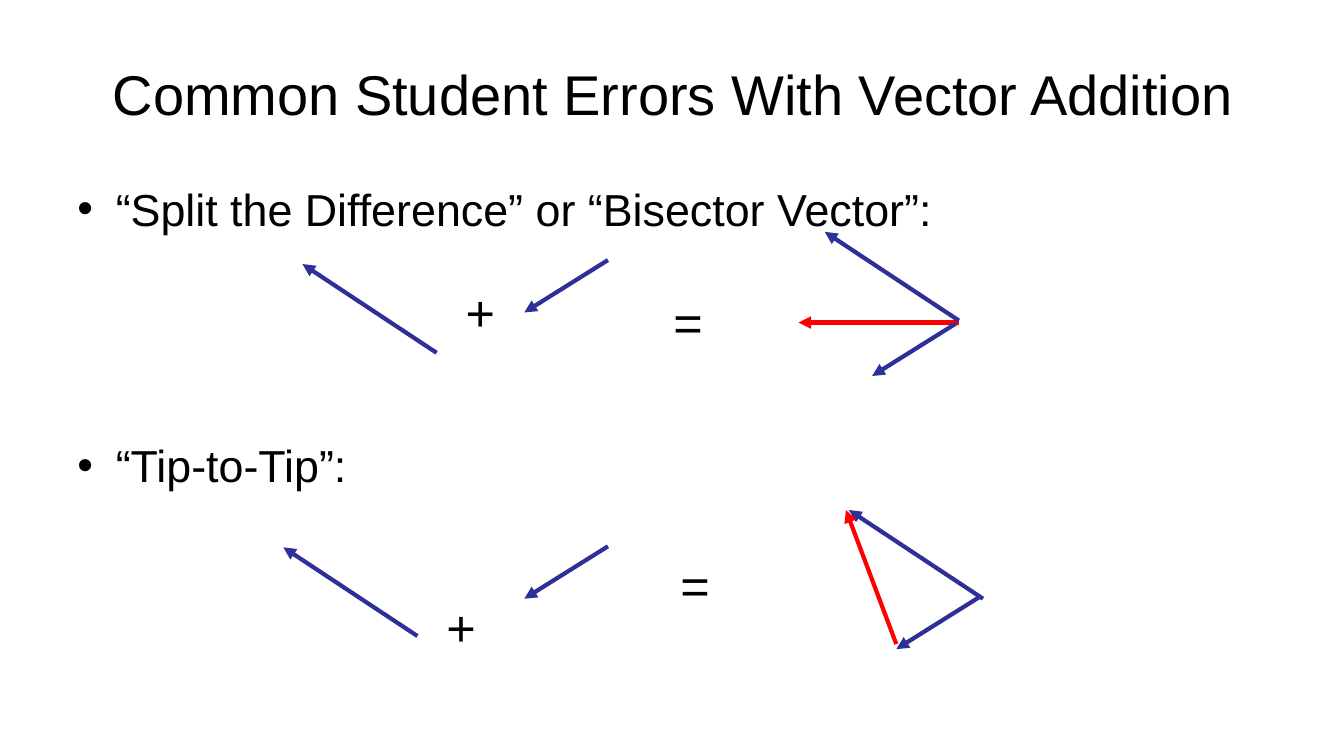
from lxml import etree
from pptx import Presentation
from pptx.dml.color import RGBColor
from pptx.enum.shapes import MSO_CONNECTOR
from pptx.enum.text import MSO_ANCHOR, PP_ALIGN
from pptx.oxml.ns import qn
from pptx.util import Inches, Pt

STRAIGHT = MSO_CONNECTOR.STRAIGHT
TOP, MIDDLE = MSO_ANCHOR.TOP, MSO_ANCHOR.MIDDLE
LEFT, CENTER = PP_ALIGN.LEFT, PP_ALIGN.CENTER

COLORS = {"text": "000000", "vector": "2F2F98", "wrong sum": "FF0000"}
FONT = "Arial"

TITLE = "Common Student Errors With Vector Addition"
ERRORS = ["“Split the Difference” or “Bisector Vector”:", "“Tip-to-Tip”:"]
ERROR_GAP = 145  # points between the two bullets

# Horizontal and vertical reach of each vector, in inches
LONG, SHORT = (-1.33, -0.88), (-0.83, 0.52)
BISECTOR, TIP_TO_TIP = (-1.59, 0), (-0.5, -1.33)

# Start point, reach, colour
ARROWS = [
    ((4.33, 3.5), LONG, "vector"),
    ((6.03, 2.58), SHORT, "vector"),
    ((9.51, 3.2), BISECTOR, "wrong sum"),
    ((4.14, 6.31), LONG, "vector"),
    ((6.03, 5.42), SHORT, "vector"),
    ((9.75, 5.94), LONG, "vector"),
    ((9.72, 5.92), SHORT, "vector"),
    ((8.89, 6.39), TIP_TO_TIP, "wrong sum"),
    ((9.51, 3.18), LONG, "vector"),
    ((9.48, 3.21), SHORT, "vector"),
]
# Sign, left, top
SIGNS = [("+", 4.52, 2.74), ("=", 6.58, 2.84), ("+", 4.33, 5.86), ("=", 6.65, 5.45)]


def add_bullet(para):
    properties = para._p.get_or_add_pPr()
    properties.set("marL", str(Inches(0.38)))
    properties.set("indent", str(Inches(-0.38)))
    etree.SubElement(properties, qn("a:buFont")).set("typeface", FONT)
    etree.SubElement(properties, qn("a:buChar")).set("char", "•")


def add_text(page, lines, bounds, size, align=LEFT, anchor=TOP, bulleted=False):
    box = page.shapes.add_textbox(*(Inches(length) for length in bounds))
    frame = box.text_frame
    frame.word_wrap = True
    frame.vertical_anchor = anchor
    for index, line in enumerate(lines):
        para = frame.add_paragraph() if index else frame.paragraphs[0]
        para.alignment = align
        if bulleted:
            add_bullet(para)
        if index:
            para.space_before = Pt(ERROR_GAP)
        span = para.add_run()
        span.text = line
        span.font.name = FONT
        span.font.size = Pt(size)
        span.font.color.rgb = RGBColor.from_string(COLORS["text"])


def add_arrow(page, start, reach, color):
    end = [origin + length for origin, length in zip(start, reach)]
    arrow = page.shapes.add_connector(
        STRAIGHT, *(Inches(position) for position in (*start, *end)))
    arrow.line.color.rgb = RGBColor.from_string(COLORS[color])
    arrow.line.width = Pt(3)
    etree.SubElement(arrow.line._get_or_add_ln(), qn("a:tailEnd")).set("type", "triangle")
    etree.SubElement(arrow._element.spPr, qn("a:effectLst"))


def main():
    deck = Presentation()
    deck.slide_width, deck.slide_height = Inches(13.33), Inches(7.5)
    page = deck.slides.add_slide(deck.slide_layouts[6])
    add_text(page, [TITLE], (0.67, 0.3, 12, 1.25), 40, CENTER, MIDDLE)
    add_text(page, ERRORS, (0.67, 1.75, 12, 5.42), 32, bulleted=True)
    for start, reach, color in ARROWS:
        add_arrow(page, start, reach, color)
    for sign, left, top in SIGNS:
        add_text(page, [sign], (left, top, 0.5, 0.71), 36)
    deck.save("out.pptx")


if __name__ == "__main__":
    main()
